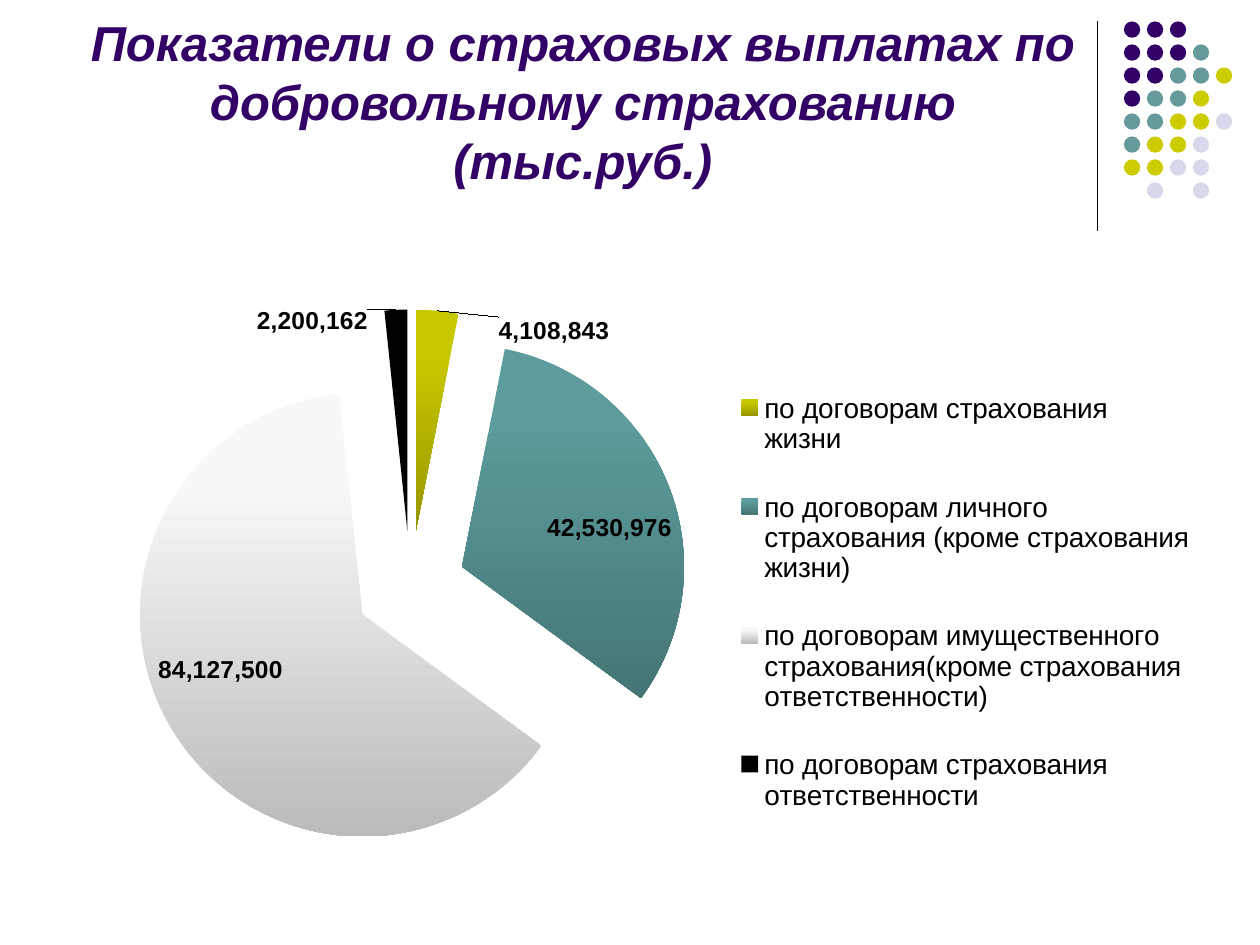
from lxml import etree
from pptx import Presentation
from pptx.chart.data import CategoryChartData
from pptx.dml.color import RGBColor
from pptx.enum import chart as ch, shapes, text
from pptx.oxml import ns, parse_xml
from pptx.util import Inches, Pt

# Content
TITLE = "Показатели о страховых выплатах по добровольному страхованию (тыс.руб.)"
PAYMENTS = [  # category, value, top colour, bottom colour
    ("по договорам страхования жизни", 4108843, "C8C800", "969600"),
    ("по договорам личного страхования (кроме страхования жизни)",
     42530976, "5C9C9C", "457575"),
    ("по договорам имущественного страхования(кроме страхования ответственности)",
     84127500, "F8F8F8", "BBBBBB"),
    ("по договорам страхования ответственности", 2200162, "000000", "000000"),
]
# Chart parts, in percent of the chart's width and height
OUTSIDE, INSIDE = ch.XL_LABEL_POSITION.OUTSIDE_END, ch.XL_LABEL_POSITION.INSIDE_END
LABEL_SHIFTS = [(OUTSIDE, 5.4, 6.6), (INSIDE, 0.9, 4.1),
                (INSIDE, -1.6, -6), (OUTSIDE, -7.4, 5.1)]
PLOT_AREA = (4.3, 8.4, 49.4, 88.8)
LEGEND_AREA = (59.1, 15.7, 40, 79)
DOT_ROWS = ["PPP", "PPPT", "PPTTY", "PTTY", "TTYYL", "TYYL", "YYLL", " L L"]
DOT_COLOURS = {"P": "330066", "T": "669999", "Y": "CCCC00", "L": "D8D8EC"}
TITLE_FONT = {"name": "Arial", "size": Pt(28), "bold": True, "italic": True}
LABEL_FONT = {"name": "Arial", "size": Pt(14), "bold": True}
LEGEND_FONT = {"name": "Arial", "size": Pt(16), "bold": False}


def rgb(value):
    return RGBColor.from_string(value)


def format_font(font, values, colour):
    for key, value in values.items():
        setattr(font, key, value)
    font.color.rgb = rgb(colour)


def manual_layout(x, y, w=None, h=None, inner=False):
    """Return a c:layout element; without a size, x and y are shifts."""
    target = '<c:layoutTarget val="inner"/>' if inner else ""
    modes = '<c:xMode val="edge"/><c:yMode val="edge"/>' if w else ""
    size = f'<c:w val="{w / 100}"/><c:h val="{h / 100}"/>' if w else ""
    return parse_xml(
        f'<c:layout {ns.nsdecls("c")}><c:manualLayout>{target}{modes}'
        f'<c:x val="{x / 100}"/><c:y val="{y / 100}"/>{size}'
        '</c:manualLayout></c:layout>')


def replace_layout(parent, layout, index):
    for old in parent.findall(ns.qn("c:layout")):
        parent.remove(old)
    parent.insert(index, layout)


prs = Presentation()
prs.slide_width, prs.slide_height = Inches(10), Inches(7.5)
slide = prs.slides.add_slide(prs.slide_layouts[5])

# Divider
divider = slide.shapes.add_connector(
    shapes.MSO_CONNECTOR.STRAIGHT,
    Inches(8.71), Inches(0.17), Inches(8.71), Inches(1.83))
divider.line.color.rgb = rgb("000000")
divider.line.width = Pt(0.75)
etree.SubElement(divider._element.spPr, ns.qn("a:effectLst"))

# Dot pattern
DOT_LEFT, DOT_TOP, DOT_STEP, DOT_SIZE = 8.92, 0.17, 0.73 / 4, 0.13
dots = slide.shapes.add_group_shape()
for row, codes in enumerate(DOT_ROWS):
    for column, code in enumerate(codes):
        if code == " ":
            continue
        dot = dots.shapes.add_shape(
            shapes.MSO_SHAPE.OVAL,
            Inches(DOT_LEFT + column * DOT_STEP), Inches(DOT_TOP + row * DOT_STEP),
            Inches(DOT_SIZE), Inches(DOT_SIZE))
        dot.shadow.inherit = False
        dot.fill.solid()
        dot.fill.fore_color.rgb = rgb(DOT_COLOURS[code])
        dot.line.fill.background()

# Title
title = slide.shapes.title
title.left, title.top = Inches(0.5), Inches(0.13)
title.width, title.height = Inches(8.25), Inches(1.42)
title.text = TITLE
title.text_frame.auto_size = text.MSO_AUTO_SIZE.NONE
title.text_frame.vertical_anchor = text.MSO_ANCHOR.BOTTOM
heading = title.text_frame.paragraphs[0]
heading.alignment = text.PP_ALIGN.CENTER
format_font(heading.runs[0].font, TITLE_FONT, "330066")

# Pie chart
data = CategoryChartData(number_format="#,##0")
data.categories = [payment[0] for payment in PAYMENTS]
data.add_series("Series 1", [payment[1] for payment in PAYMENTS])
chart = slide.shapes.add_chart(
    ch.XL_CHART_TYPE.PIE, Inches(0.67), Inches(2.04),
    Inches(8.92), Inches(4.96), data).chart
chart.has_title = False
format_font(chart.font, {"name": "Arial", "size": Pt(10)}, "000000")
plot = chart.plots[0]
plot.vary_by_categories = True
pie = plot.series[0]
replace_layout(chart._chartSpace.chart.plotArea,
               manual_layout(*PLOT_AREA, inner=True), 0)

# Slices
explosion = parse_xml(f'<c:explosion {ns.nsdecls("c")} val="25"/>')
pie._element.find(ns.qn("c:tx")).addnext(explosion)
for index, (_, _, top_colour, bottom_colour) in enumerate(PAYMENTS):
    fill = pie.points[index].format.fill
    if top_colour == bottom_colour:
        fill.solid()
        fill.fore_color.rgb = rgb(top_colour)
        continue
    fill.gradient()
    fill.gradient_angle = 270
    for stop, colour, position in zip(
            fill.gradient_stops, (top_colour, bottom_colour), (0.2, 1)):
        stop.color.rgb = rgb(colour)
        stop.position = position

# Value labels
labels = pie.data_labels
labels.show_value = True
labels.number_format, labels.number_format_is_linked = "#,##0", False
format_font(labels.font, LABEL_FONT, "000000")
for index, (position, *shift) in enumerate(LABEL_SHIFTS):
    label = pie.points[index].data_label
    format_font(label.font, LABEL_FONT, "000000")
    label.position = position
    replace_layout(labels._element.findall(ns.qn("c:dLbl"))[-1],
                   manual_layout(*shift), 1)
for leader in labels._element.findall(ns.qn("c:showLeaderLines")):
    leader.set("val", "1")

# Legend
chart.has_legend = True
legend = chart.legend
legend.position = ch.XL_LEGEND_POSITION.RIGHT
legend.include_in_layout = False
format_font(legend.font, LEGEND_FONT, "000000")
replace_layout(legend._element, manual_layout(*LEGEND_AREA), 1)

prs.save("out.pptx")
